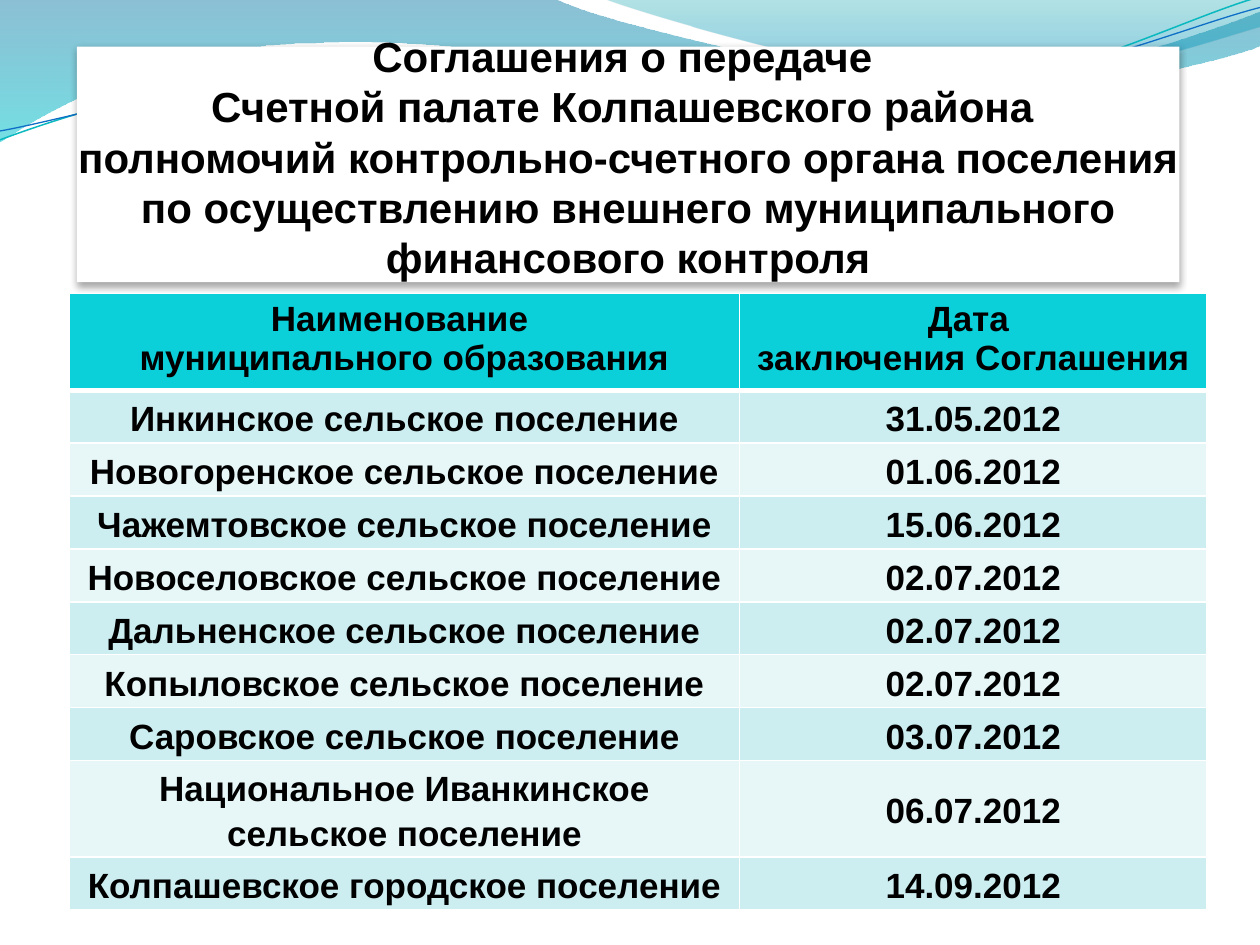
from dataclasses import dataclass
from math import cos, radians, sin

from lxml.etree import SubElement
from pptx import Presentation
from pptx.dml.color import RGBColor
from pptx.enum.text import MSO_ANCHOR, PP_ALIGN
from pptx.oxml.ns import qn
from pptx.util import Inches, Pt


@dataclass(frozen=True)
class Theme:
    font: str = "Arial"
    title_size: float = 24
    title_leading: float = 28.8
    table_size: float = 20
    text: str = "000000"
    white: str = "FFFFFF"
    header: str = "0BD0D9"
    bands: tuple = ("CCEEF1", "E7F7F8")
    teal_line: str = "0AB8BF"
    blue_line: str = "0F6FC6"
    # Gradient stops: position, colour, opacity in percent
    wide_wave: tuple = ((0, "0074A1", 45), (1, "00C6CF", 55))
    right_wave: tuple = ((0, "00A1A9", 30), (0.8, "008BBF", 45))


THEME = Theme()
CURVE_TILT = -2.7

TITLE = ("Соглашения о передаче \vСчетной палате Колпашевского района \v"
         "полномочий контрольно-счетного органа поселения по осуществлению "
         "внешнего муниципального финансового контроля")
HEADER = ("Наименование \nмуниципального образования",
          "Дата \nзаключения Соглашения")
AGREEMENTS = (
    ("Инкинское сельское поселение", "31.05.2012"),
    ("Новогоренское сельское поселение", "01.06.2012"),
    ("Чажемтовское сельское поселение", "15.06.2012"),
    ("Новоселовское сельское поселение", "02.07.2012"),
    ("Дальненское сельское поселение", "02.07.2012"),
    ("Копыловское сельское поселение", "02.07.2012"),
    ("Саровское сельское поселение", "03.07.2012"),
    ("Национальное Иванкинское сельское поселение", "06.07.2012"),
    ("Колпашевское городское поселение", "14.09.2012"),
)

# Each outline: start point, then Bezier segments (3 points) or straight ones (1 point)
WIDE_WAVE = ((0, -0.01), (
    ((4.4, -0.01),),
    ((4.76, 0.17), (6.64, 0.63), (7.58, 0.63)),
    ((8.53, 0.63), (9.58, 0.26), (10, 0.09)),
    ((10.01, 0.36),),
    ((9.83, 0.44), (8.7, 0.76), (7.46, 0.75)),
    ((6.22, 0.75), (3.82, 0.28), (2.57, 0.34)),
    ((1.29, 0.35), (0.46, 0.83), (-0.01, 1.13))))
RIGHT_WAVE = ((4.79, -0.01), (
    ((5.09, 0.11), (6.82, 0.62), (7.69, 0.65)),
    ((8.56, 0.69), (9.61, 0.32), (10, 0.21)),
    ((10, 0),)))
TEAL_CURVE = ((0, 1.11), (
    ((0.48, 0.93), (1.58, 0.57), (2.77, 0.52)),
    ((3.95, 0.47), (5.93, 0.89), (7.13, 0.8)),
    ((8.33, 0.71), (9.38, 0.15), (9.98, -0.02))))
BLUE_CURVE = ((0, 1.04), (
    ((0.47, 0.96), (1.64, 0.61), (2.83, 0.56)),
    ((4.03, 0.51), (5.97, 0.83), (7.17, 0.75)),
    ((8.36, 0.67), (9.41, 0.21), (10, 0.06))))


def rgb(value):
    return RGBColor.from_string(value)


def set_attrs(obj, values):
    for name, value in values.items():
        setattr(obj, name, value)


def turn(outline, center, degrees):
    """Rotate every point of the outline clockwise about the center."""
    c, s = cos(radians(degrees)), sin(radians(degrees))
    cx, cy = center

    def turned(point):
        dx, dy = point[0] - cx, point[1] - cy
        return cx + dx * c - dy * s, cy + dx * s + dy * c

    start, segments = outline
    return turned(start), [[turned(pt) for pt in segment] for segment in segments]


def add_outline(slide, left, top, outline, close):
    """Build a freeform, then bend its three-point segments into Bezier curves."""
    start, segments = outline
    points = [(Inches(left + x), Inches(top + y))
              for x, y in (start, *(pt for segment in segments for pt in segment))]
    builder = slide.shapes.build_freeform(*points[0], scale=1.0)
    builder.add_line_segments(points[1:], close=close)
    sp = builder.convert_to_shape()
    sp.shadow.inherit = False
    lines = iter(list(sp._element.spPr.iter(qn("a:lnTo"))))
    for segment in segments:
        first, *others = [next(lines) for _ in segment]
        if others:
            first.tag = qn("a:cubicBezTo")
        for line in others:
            first.append(line[0])
            line.getparent().remove(line)
    return sp


def add_wave(slide, left, top, outline, stops):
    sp = add_outline(slide, left, top, outline, close=True)
    sp.line.fill.background()
    sp.fill.gradient()
    sp.fill.gradient_angle = 270
    for stop, (position, color, _) in zip(sp.fill.gradient_stops, stops):
        stop.position = position
        stop.color.rgb = rgb(color)
    colors = sp._element.spPr.iter(qn("a:srgbClr"))
    for clr, (_, _, opacity) in zip(list(colors), stops):
        SubElement(clr, qn("a:alpha"), val=str(opacity * 1000))


def add_curve(slide, left, top, outline, center, color, width):
    level = turn(outline, center, -CURVE_TILT)
    sp = add_outline(slide, left, top, level, close=False)
    sp.rotation = CURVE_TILT
    sp.fill.background()
    sp.line.color.rgb = rgb(color)
    sp.line.width = Pt(width)


def add_header_waves(slide, left, top):
    add_wave(slide, left, top, WIDE_WAVE, THEME.wide_wave)
    add_wave(slide, left, top, RIGHT_WAVE, THEME.right_wave)
    add_curve(slide, left, top, TEAL_CURVE, (4.99, 0.58), THEME.teal_line, 0.85)
    add_curve(slide, left, top, BLUE_CURVE, (5, 0.59), THEME.blue_line, 0.75)


def style_paragraph(p, size, spacing):
    set_attrs(p, {"alignment": PP_ALIGN.CENTER, "line_spacing": spacing})
    for r in p.runs:
        set_attrs(r.font, {"name": THEME.font, "size": Pt(size), "bold": True})
        r.font.color.rgb = rgb(THEME.text)


def add_soft_shadow(sp):
    effects = SubElement(sp._element.spPr, qn("a:effectLst"))
    shadow = SubElement(effects, qn("a:outerShdw"), blurRad="50800", dist="25400",
                        dir="5400000", rotWithShape="0")
    clr = SubElement(shadow, qn("a:srgbClr"), val=THEME.text)
    SubElement(clr, qn("a:alpha"), val="35000")


def add_title(slide, left, top, width, height):
    sp = slide.shapes.add_textbox(Inches(left), Inches(top), Inches(width), Inches(height))
    sp.fill.solid()
    sp.fill.fore_color.rgb = rgb(THEME.white)
    add_soft_shadow(sp)
    tf = sp.text_frame
    set_attrs(tf, {"word_wrap": True, "vertical_anchor": MSO_ANCHOR.BOTTOM,
                   "margin_left": 0, "margin_right": 0,
                   "margin_top": Inches(0.05), "margin_bottom": 0})
    tf.text = TITLE
    style_paragraph(tf.paragraphs[0], THEME.title_size, Pt(THEME.title_leading))


def set_borders(cell, widths):
    """Draw white borders; widths in points run left, right, top, bottom."""
    tcPr = cell._tc.get_or_add_tcPr()
    for i, (side, width) in enumerate(zip(("lnL", "lnR", "lnT", "lnB"), widths)):
        ln = SubElement(tcPr, qn(f"a:{side}"), w=str(Pt(width)))
        fill = SubElement(ln, qn("a:solidFill"))
        SubElement(fill, qn("a:srgbClr"), val=THEME.white)
        tcPr.insert(i, ln)


def fill_cell(cell, text, color, spacing, borders, layout):
    cell.text = text
    set_attrs(cell, layout)
    for p in cell.text_frame.paragraphs:
        style_paragraph(p, THEME.table_size, spacing)
    cell.fill.solid()
    cell.fill.fore_color.rgb = rgb(color)
    set_borders(cell, borders)


def add_agreements_table(slide, left, top, col_widths, row_heights):
    rows = (HEADER, *AGREEMENTS)
    table = slide.shapes.add_table(
        len(rows), len(col_widths), Inches(left), Inches(top),
        Inches(sum(col_widths)), Inches(sum(row_heights))).table
    for column, width in zip(table.columns, col_widths):
        column.width = Inches(width)
    body = {"vertical_anchor": MSO_ANCHOR.MIDDLE, "margin_top": 0, "margin_bottom": 0,
            "margin_left": Inches(0.07), "margin_right": Inches(0.07)}
    for i, (texts, height) in enumerate(zip(rows, row_heights)):
        table.rows[i].height = Inches(height)
        for j, text in enumerate(texts):
            if i == 0:
                fill_cell(table.cell(i, j), text, THEME.header, 1.0, (1, 1, 1, 3), {})
            else:
                borders = (1, 1, 3 if i == 1 else 1, 1)
                fill_cell(table.cell(i, j), text, THEME.bands[(i - 1) % 2], 1.15,
                          borders, body)


def main():
    prs = Presentation()
    set_attrs(prs, {"slide_width": Inches(10), "slide_height": Inches(7.5)})
    slide = prs.slides.add_slide(prs.slide_layouts[6])
    add_header_waves(slide, 0, 0)
    add_title(slide, 0.61, 0.37, 8.75, 1.87)
    add_agreements_table(slide, 0.55, 2.33, (5.32, 3.71),
                         (0.72, *[0.42] * 7, 0.7, 0.42))
    prs.save("out.pptx")


if __name__ == "__main__":
    main()
